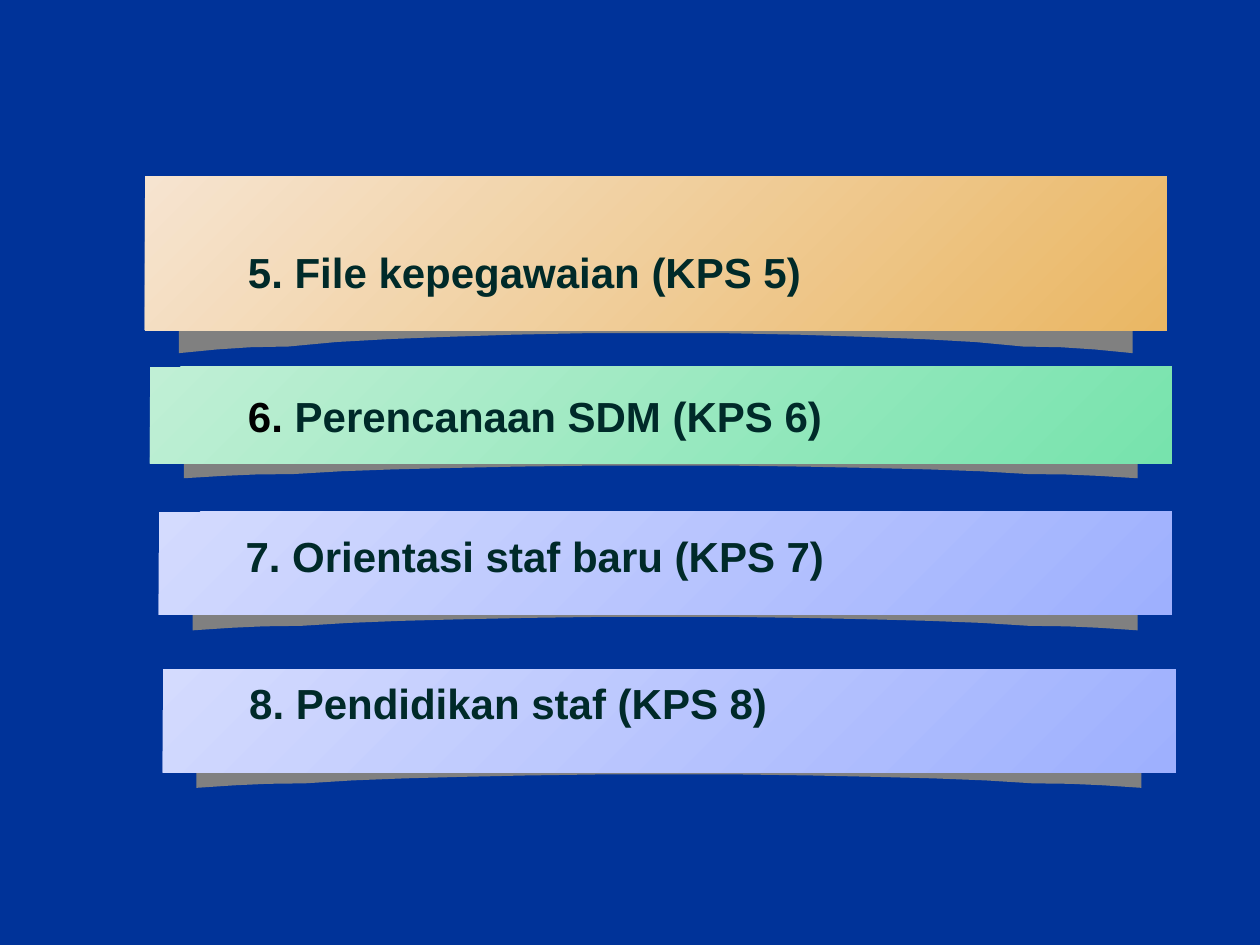
from dataclasses import dataclass

from pptx import Presentation
from pptx.dml.color import RGBColor
from pptx.enum import shapes, text
from pptx.util import Inches, Pt


@dataclass(frozen=True)
class Theme:
    background: str = "003399"
    shadow: str = "808080"
    ink: str = "002A29"
    black: str = "000000"
    orange: tuple = ("F6E4D0", "EAB764")
    green: tuple = ("C0EFD5", "77E3AD")
    blue: tuple = ("D4DBFE", "9EB0FE")
    font: str = "Arial"
    size: int = 24


THEME = Theme()
SHADOW_INSET = 0.27
SHADOW_HEIGHT = 0.48
SHADOW_DROP = 0.15
SHADOW_CURVE = [(1, 1), (0.92, 0.95), (0.85, 0.92), (0.77, 0.91), (0.67, 0.85),
                (0.56, 0.81), (0.44, 0.78), (0.3, 0.75), (0.15, 0.73), (0, 0.73)]


def set_solid(fill, color):
    fill.solid()
    fill.fore_color.rgb = RGBColor.from_string(color)


def add_curved_shadow(slide, left, top, width, height):
    half = width / 2 - SHADOW_INSET
    center = left + width / 2
    depth = height * SHADOW_HEIGHT
    shadow_top = top + height * (1 + SHADOW_DROP) - depth
    right_side = SHADOW_CURVE
    left_side = [(-x, y) for x, y in reversed(SHADOW_CURVE[:-1])]
    outline = right_side + left_side + [(-1, 0.24), (0, 0), (1, 0.24)]
    points = [(Inches(center + x * half), Inches(shadow_top + y * depth)) for x, y in outline]
    builder = slide.shapes.build_freeform(*points[0])
    builder.add_line_segments(points[1:], close=True)
    shape = builder.convert_to_shape()
    shape.shadow.inherit = False
    set_solid(shape.fill, THEME.shadow)
    shape.line.fill.background()


def add_banner(slide, left, top, width, height, colors):
    add_curved_shadow(slide, left, top, width, height)
    shape = slide.shapes.add_shape(
        shapes.MSO_SHAPE.RECTANGLE, Inches(left), Inches(top), Inches(width), Inches(height))
    shape.shadow.inherit = False
    shape.line.fill.background()
    shape.fill.gradient()
    shape.fill.gradient_angle = 315
    for stop, position, color in zip(shape.fill.gradient_stops, (0, 1), colors):
        stop.position = position
        stop.color.rgb = RGBColor.from_string(color)


def add_label(slide, left, top, width, height, parts):
    box = slide.shapes.add_textbox(Inches(left), Inches(top), Inches(width), Inches(height))
    frame = box.text_frame
    frame.word_wrap = True
    frame.auto_size = text.MSO_AUTO_SIZE.SHAPE_TO_FIT_TEXT
    paragraph = frame.paragraphs[0]
    for words, color in parts:
        run = paragraph.add_run()
        run.text = words
        run.font.name = THEME.font
        run.font.size = Pt(THEME.size)
        run.font.bold = True
        run.font.color.rgb = RGBColor.from_string(color)


def main():
    presentation = Presentation()
    presentation.slide_width, presentation.slide_height = Inches(10), Inches(7.5)
    slide = presentation.slides.add_slide(presentation.slide_layouts[6])
    set_solid(slide.background.fill, THEME.background)

    items = [
        ((1.15, 1.4, 8.11, 1.22), THEME.orange, (1.87, 1.91, 7.07, 0.5),
         [("5. File kepegawaian (KPS 5)", THEME.ink)]),
        ((1.19, 2.91, 8.11, 0.77), THEME.green, (1.87, 3.05, 7.33, 0.5),
         [("6. ", THEME.black), ("Perencanaan SDM (KPS 6)", THEME.ink)]),
        ((1.26, 4.06, 8.04, 0.82), THEME.blue, (1.85, 4.16, 6.31, 0.5),
         [("7. Orientasi staf baru (KPS 7)", THEME.ink)]),
        ((1.29, 5.31, 8.04, 0.82), THEME.blue, (1.88, 5.33, 6.53, 0.5),
         [("8. Pendidikan staf (KPS 8)", THEME.ink)]),
    ]
    for banner, colors, label, parts in items:
        add_banner(slide, *banner, colors)
        add_label(slide, *label, parts)

    presentation.save("out.pptx")


if __name__ == "__main__":
    main()
